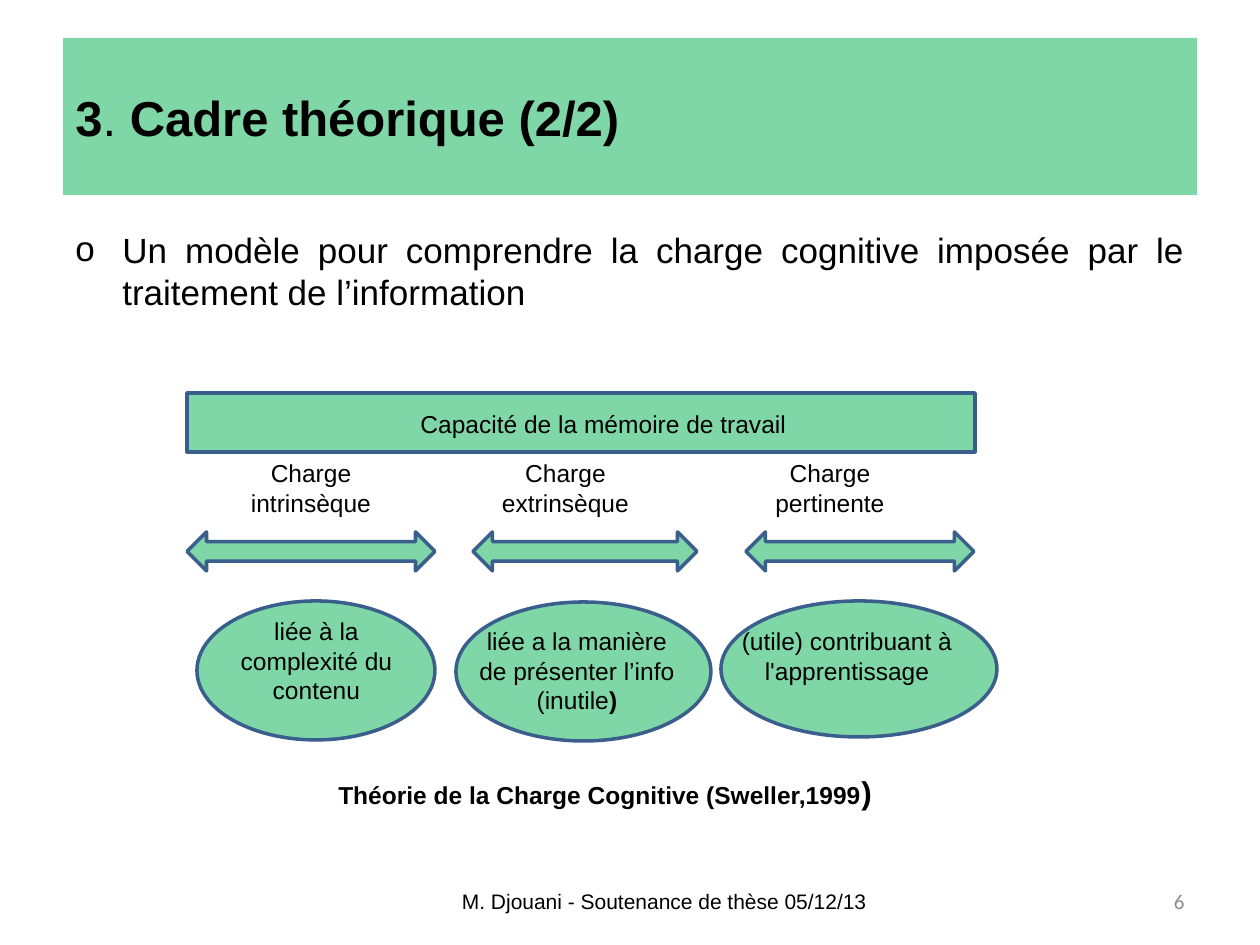
from lxml import etree
from pptx import Presentation
from pptx.dml.color import RGBColor
from pptx.enum.shapes import MSO_SHAPE as Kind
from pptx.enum.text import MSO_ANCHOR as Anchor, PP_ALIGN as Align
from pptx.oxml.ns import qn
from pptx.util import Pt

PX = 914400 / 126
COLORS = {"green": "00B050", "edge": "3A5F8C", "ink": "000000", "gray": "8C8C8C"}

LOADS = [
    {
        "name": ("Charge intrinsèque", 20, 208),
        "arrow": (0, 248),
        "oval": (10, 208, 238, 139),
        "note": (40, 217, 179, 102),
        "runs": [("liée à la complexité du contenu", False)],
    },
    {
        "name": ("Charge extrinsèque", 276, 205),
        "arrow": (286, 224),
        "oval": (269, 209, 255, 139),
        "note": (276, 227, 228, 102),
        "runs": [("liée a la manière de présenter l’info (inutile", False), (")", True)],
    },
    {
        "name": ("Charge pertinente", 542, 202),
        "arrow": (559, 228),
        "oval": (534, 208, 276, 136),
        "note": (532, 227, 256, 72),
        "runs": [("(utile) contribuant à l'apprentissage", False)],
    },
]


def emu(*vals):
    return [round(v * PX) for v in vals]


def rgb(key):
    return RGBColor.from_string(COLORS[key])


def add_run(para, text, size=14, bold=False, font="Arial", color="ink"):
    run = para.add_run()
    run.text = text
    run.font.size = Pt(size)
    run.font.bold = bold
    run.font.name = font
    run.font.color.rgb = rgb(color)


def add_form(slide, kind, box, edge=True):
    form = slide.shapes.add_shape(kind, *emu(*box))
    form.shadow.inherit = False
    form.fill.solid()
    form.fill.fore_color.rgb = rgb("green")
    tint = form.fill._xPr.find(qn("a:solidFill"))[0]
    etree.SubElement(tint, qn("a:alpha"), val="50000")
    if edge:
        form.line.color.rgb = rgb("edge")
        form.line.width = Pt(2)
    else:
        form.line.fill.background()
    return form


def add_text(slide, box, align=Align.CENTER, anchor=Anchor.TOP):
    frame = slide.shapes.add_textbox(*emu(*box)).text_frame
    frame.word_wrap = True
    frame.vertical_anchor = anchor
    para = frame.paragraphs[0]
    para.alignment = align
    return para


def add_title(slide, box):
    frame = add_form(slide, Kind.RECTANGLE, box, edge=False).text_frame
    frame.word_wrap = True
    frame.vertical_anchor = Anchor.MIDDLE
    para = frame.paragraphs[0]
    para.alignment = Align.LEFT
    add_run(para, "3", 28, True)
    add_run(para, ". ", 28)
    add_run(para, "Cadre théorique (2/2)", 28, True)


def add_body(slide, box):
    para = add_text(slide, box, Align.JUSTIFY)
    props = para._p.get_or_add_pPr()
    indent = emu(47)[0]
    props.set("marL", str(indent))
    props.set("indent", str(-indent))
    etree.SubElement(props, qn("a:buFont"), typeface="Arial")
    etree.SubElement(props, qn("a:buChar"), char="o")
    add_run(para, "Un modèle pour comprendre la charge cognitive imposée par le traitement de l’information", 20)


def add_load(slide, left, top, load):
    text, x, width = load["name"]
    add_run(add_text(slide, (left + x, top + 59, width, 72)), text)

    x, width = load["arrow"]
    add_form(slide, Kind.LEFT_RIGHT_ARROW, (left + x, top + 139, width, 39))

    x, y, width, height = load["oval"]
    add_form(slide, Kind.OVAL, (left + x, top + y, width, height))

    x, y, width, height = load["note"]
    para = add_text(slide, (left + x, top + y, width, height))
    for text, bold in load["runs"]:
        add_run(para, text, bold=bold)


def add_model(slide, left, top):
    add_form(slide, Kind.RECTANGLE, (left, top, 788, 59))
    add_run(add_text(slide, (left + 89, top + 10, 655, 43)), "Capacité de la mémoire de travail")
    for load in LOADS:
        add_load(slide, left, top, load)
    para = add_text(slide, (left + 118, top + 374, 600, 50))
    add_run(para, "Théorie de la Charge Cognitive (Sweller,1999", bold=True)
    add_run(para, ")", 18, True)


def add_footer(slide, left, top, height):
    para = add_text(slide, (left, top, 467, height), anchor=Anchor.MIDDLE)
    add_run(para, "M. Djouani - Soutenance de thèse 05/12/13", 12)
    para = add_text(slide, (left + 472, top, 294, height), Align.RIGHT, Anchor.MIDDLE)
    add_run(para, "6", 12, font="Calibri", color="gray")


def main():
    deck = Presentation()
    deck.slide_width, deck.slide_height = emu(1260, 945)
    slide = deck.slides.add_slide(deck.slide_layouts[6])
    add_title(slide, (63, 38, 1134, 157))
    add_body(slide, (63, 222, 1134, 120))
    add_model(slide, 187, 393)
    add_footer(slide, 431, 876, 50)
    deck.save("out.pptx")


if __name__ == "__main__":
    main()
